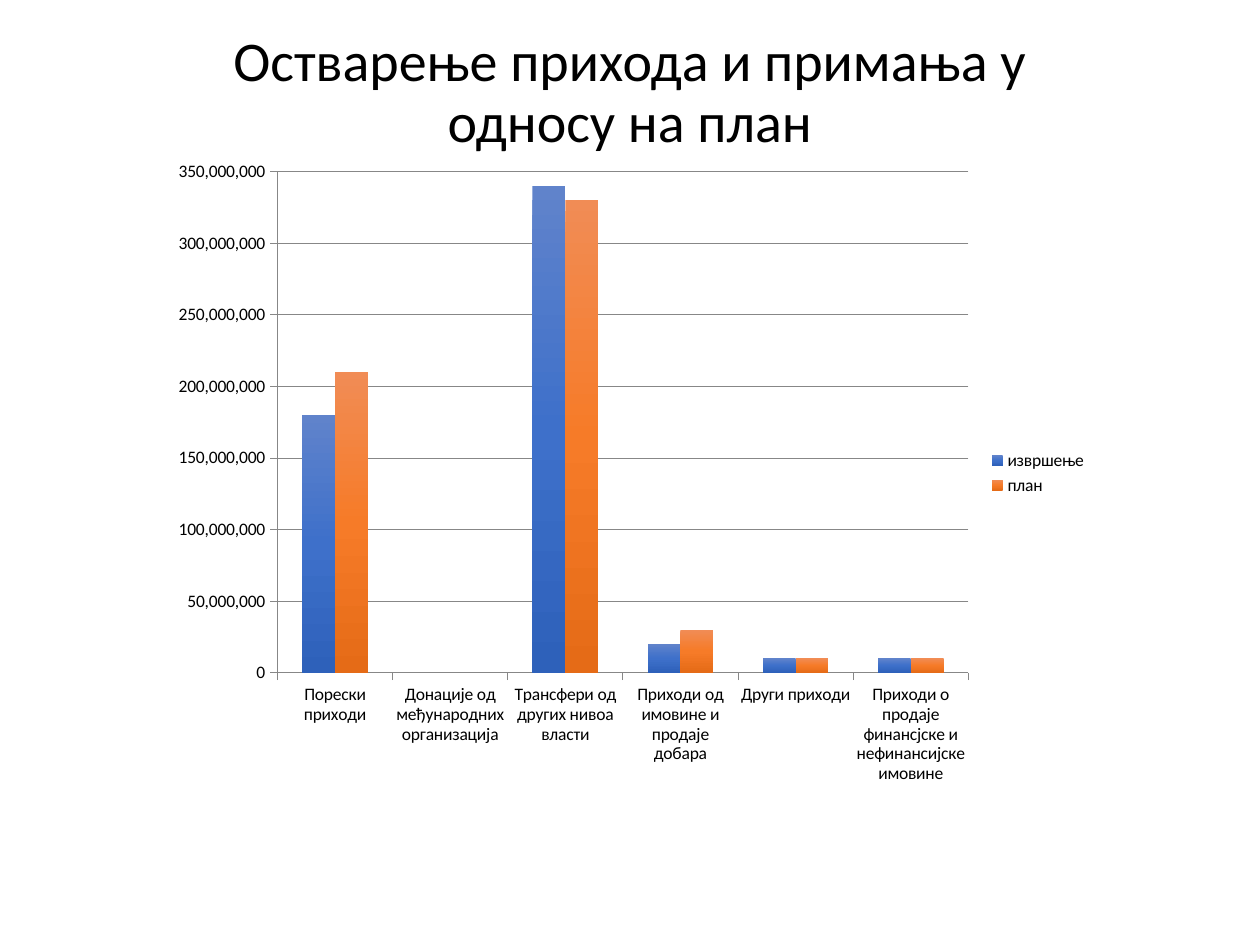
from dataclasses import dataclass

from lxml.etree import SubElement
from pptx import Presentation
from pptx.chart.data import CategoryChartData
from pptx.dml.color import RGBColor
from pptx.enum.chart import XL_CHART_TYPE, XL_LEGEND_POSITION, XL_TICK_MARK
from pptx.enum.text import MSO_ANCHOR, PP_ALIGN
from pptx.oxml import parse_xml
from pptx.oxml.ns import nsdecls, qn
from pptx.util import Inches, Pt


@dataclass(frozen=True)
class Theme:
    font: str = "Calibri"
    title_size: int = 32
    chart_size: int = 10
    line_width: float = 0.5
    text: str = "000000"
    line: str = "878787"
    blues: tuple[str, ...] = ("6083CB", "3E70CA", "2E61BA")
    oranges: tuple[str, ...] = ("F18C55", "F67B28", "E56B17")


@dataclass(frozen=True)
class Box:
    """Left, top, width and height as shares of the parent's size."""
    x: float
    y: float
    w: float
    h: float

    def on_slide(self, prs):
        return (int(self.x * prs.slide_width), int(self.y * prs.slide_height),
                int(self.w * prs.slide_width), int(self.h * prs.slide_height))


@dataclass(frozen=True)
class Series:
    name: str
    millions: tuple[int, ...]
    gradient: tuple[str, ...]


THEME = Theme()
MILLION = 1_000_000
TITLE = "Остварење прихода и примања у односу на план"
TITLE_BOX = Box(0.125, 0.089, 0.75, 0.081)
CHART_BOX = Box(0.127, 0.157, 0.746, 0.687)
PLOT_BOX = Box(0.125, 0.036, 0.735, 0.772)
CATEGORIES = (
    "Порески приходи",
    "Донације од међународних организација",
    "Трансфери од других нивоа власти",
    "Приходи од имовине и продаје добара",
    "Други приходи",
    "Приходи о продаје финансјске и нефинансијске имовине",
)
SERIES = (
    Series("извршење", (180, 0, 340, 20, 10, 10), THEME.blues),
    Series("план", (210, 0, 330, 30, 10, 10), THEME.oranges),
)


def set_all(target, values: dict) -> None:
    for name, value in values.items():
        setattr(target, name, value)


def style_font(font, size: int) -> None:
    set_all(font, {"name": THEME.font, "size": Pt(size), "bold": False})
    font.color.rgb = RGBColor.from_string(THEME.text)


def style_line(line) -> None:
    line.color.rgb = RGBColor.from_string(THEME.line)
    line.width = Pt(THEME.line_width)


def fill_gradient(series, colors: tuple[str, ...]) -> None:
    """Fill the bars from top to bottom with evenly spaced colours."""
    step = 100000 // (len(colors) - 1)
    stops = "".join(f'<a:gs pos="{i * step}"><a:srgbClr val="{c}"/></a:gs>'
                    for i, c in enumerate(colors))
    series.format.line.fill.background()
    series.format.line._ln.addprevious(parse_xml(
        f'<a:gradFill {nsdecls("a")} rotWithShape="1"><a:gsLst>{stops}</a:gsLst>'
        '<a:lin ang="5400000" scaled="0"/></a:gradFill>'))


def place_plot(chart, box: Box) -> None:
    """Fix the inner plot area within the chart."""
    plot_area = chart._chartSpace.chart.plotArea
    for old in plot_area.findall(qn("c:layout")):
        plot_area.remove(old)
    layout = parse_xml(f'<c:layout {nsdecls("c")}/>')
    plot_area.insert(0, layout)
    manual = SubElement(layout, qn("c:manualLayout"))
    for tag, value in (("layoutTarget", "inner"), ("xMode", "edge"), ("yMode", "edge"),
                       ("x", box.x), ("y", box.y), ("w", box.w), ("h", box.h)):
        SubElement(manual, qn(f"c:{tag}")).set("val", str(value))


def add_title(slide, prs) -> None:
    tf = slide.shapes.add_textbox(*TITLE_BOX.on_slide(prs)).text_frame
    set_all(tf, {"word_wrap": True, "vertical_anchor": MSO_ANCHOR.BOTTOM})
    p = tf.paragraphs[0]
    set_all(p, {"alignment": PP_ALIGN.CENTER, "line_spacing": 0.9})
    r = p.add_run()
    r.text = TITLE
    style_font(r.font, THEME.title_size)


def add_revenue_chart(slide, prs) -> None:
    data = CategoryChartData(number_format="#,##0")
    data.categories = CATEGORIES
    for s in SERIES:
        data.add_series(s.name, [v * MILLION for v in s.millions])
    chart = slide.shapes.add_chart(
        XL_CHART_TYPE.COLUMN_CLUSTERED, *CHART_BOX.on_slide(prs), data).chart
    style_font(chart.font, THEME.chart_size)
    set_all(chart, {"has_title": False, "has_legend": True})
    set_all(chart.legend, {"position": XL_LEGEND_POSITION.RIGHT, "include_in_layout": False})

    plot = chart.plots[0]
    set_all(plot, {"gap_width": 150, "overlap": 0, "vary_by_categories": False})
    for series, s in zip(plot.series, SERIES):
        fill_gradient(series, s.gradient)

    for axis in (chart.category_axis, chart.value_axis):
        set_all(axis, {"major_tick_mark": XL_TICK_MARK.OUTSIDE,
                       "minor_tick_mark": XL_TICK_MARK.NONE})
        style_line(axis.format.line)
    set_all(chart.value_axis, {"minimum_scale": 0, "maximum_scale": 350 * MILLION,
                               "major_unit": 50 * MILLION, "has_major_gridlines": True})
    set_all(chart.value_axis.tick_labels,
            {"number_format": "#,##0", "number_format_is_linked": False})
    style_line(chart.value_axis.major_gridlines.format.line)
    place_plot(chart, PLOT_BOX)


def main() -> None:
    prs = Presentation()
    set_all(prs, {"slide_width": Inches(10), "slide_height": Inches(7.5)})
    slide = prs.slides.add_slide(prs.slide_layouts[6])
    add_title(slide, prs)
    add_revenue_chart(slide, prs)
    prs.save("out.pptx")


if __name__ == "__main__":
    main()
